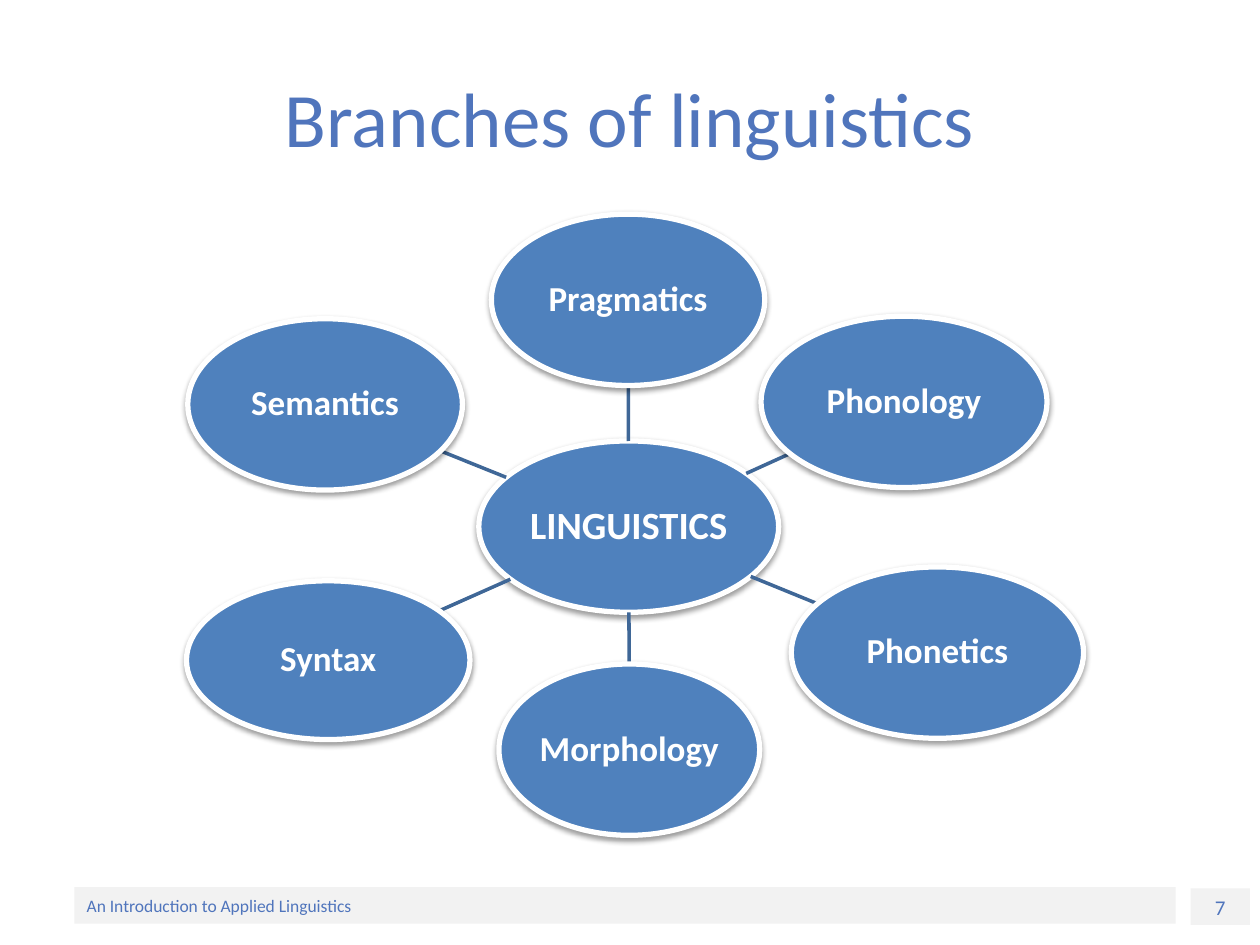
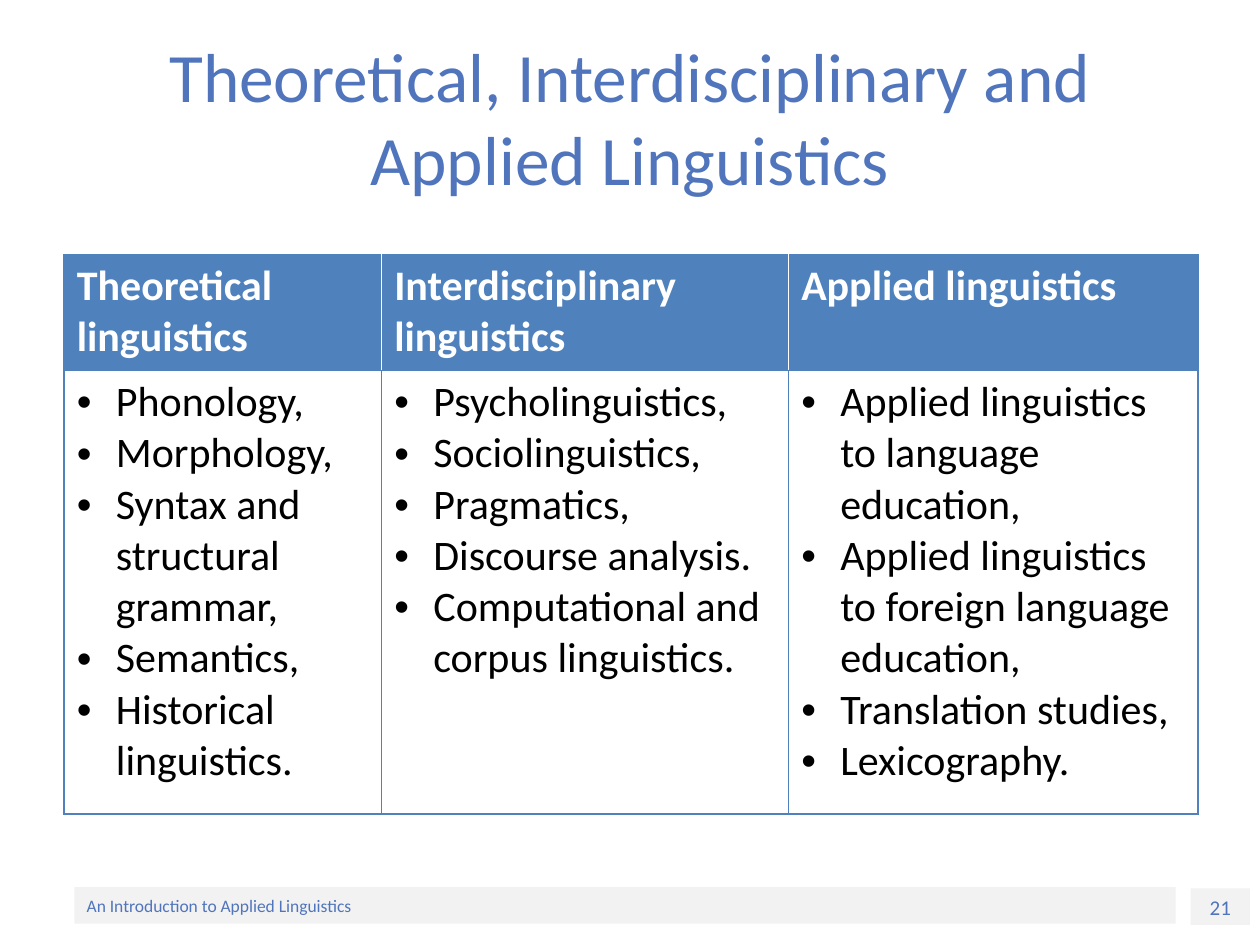
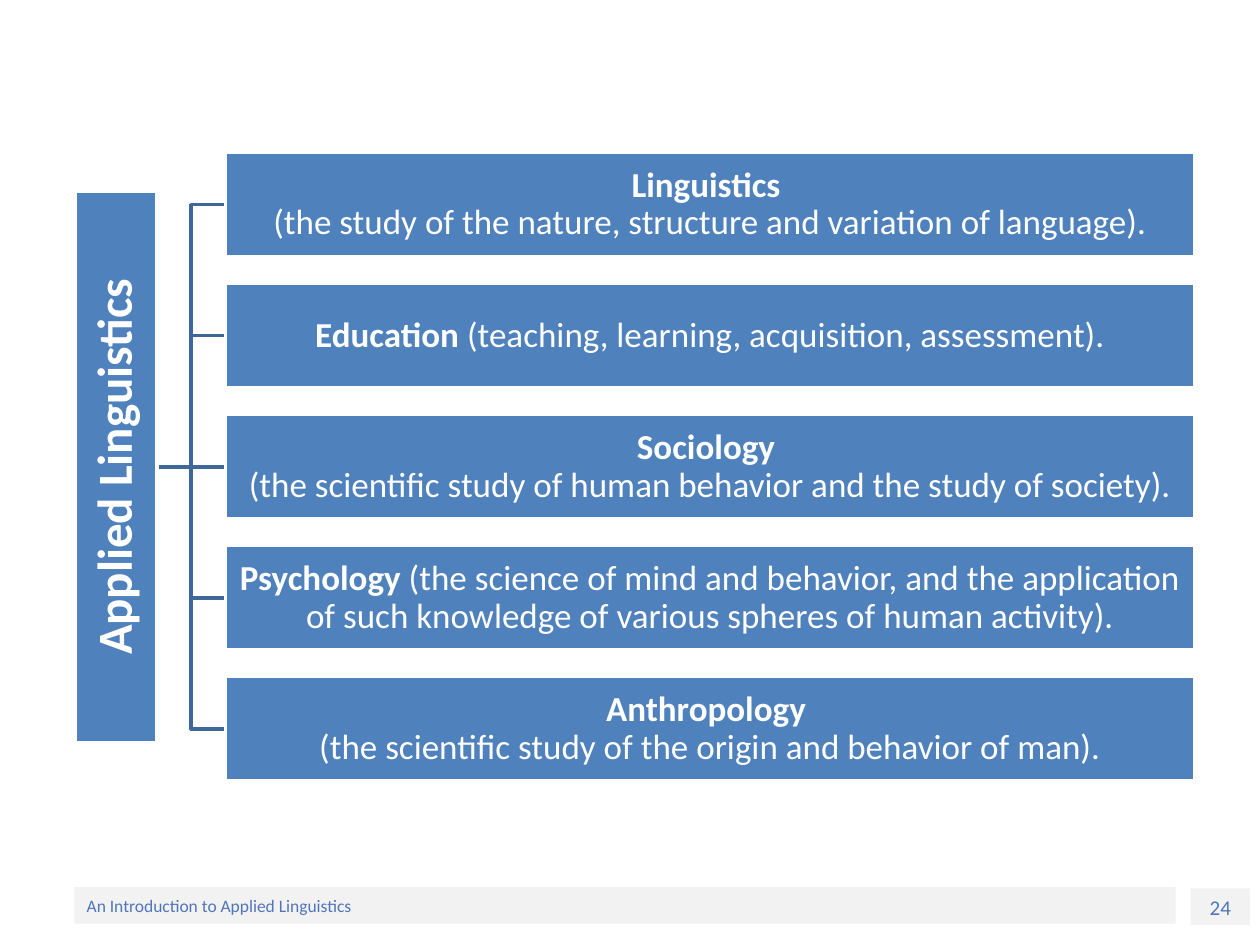
import math

import pptx
import pptx.chart
import pptx.dml.color
import pptx.enum.shapes
import pptx.enum.text
import pptx.oxml
import pptx.oxml.ns
import pptx.util
from lxml import etree

RGB = pptx.dml.color.RGBColor
SHAPE = pptx.enum.shapes.MSO_SHAPE
LINK = pptx.enum.shapes.MSO_CONNECTOR
ALIGN = pptx.enum.text.PP_ALIGN
ANCHOR = pptx.enum.text.MSO_ANCHOR
Pt = pptx.util.Pt

FONT = "Calibri"
INK = RGB(0x50, 0x75, 0xBC)
BLUE = RGB(0x4F, 0x81, 0xBD)
DARK = RGB(0x3F, 0x67, 0x97)
PALE = RGB(0xF2, 0xF2, 0xF2)
WHITE = RGB(0xFF, 0xFF, 0xFF)
BLACK = RGB(0, 0, 0)

# The slide is a grid of 100 columns and 75 rows; boxes are (x, y, w, h) in cells.
WIDTH, HEIGHT = pptx.util.Inches(10), pptx.util.Inches(7.5)
CELL = WIDTH / 100
TITLE = (5, 3, 90, 12.5)
FOOT = (5.9, 70.4, 87.4, 2.9)
PAGE = (94.5, 70.5, 4.7, 2.9)
WHEEL = (14.8, 17, 71.2, 49.3)
TABLE = (5.1, 20.2, 90, 44.4)
TREE = (5.95, 12.1, 88.85, 49.9)

HUB = ("LINGUISTICS", 23.2, 18, 23.8, 13.6)
NODES = [
    ("Pragmatics", 24.2, 0, 21.7, 13.6),
    ("Phonology", 45.6, 8.1, 22.7, 13.6),
    ("Phonetics", 48, 28, 23.2, 13.6),
    ("Morphology", 24.8, 35.7, 20.7, 13.6),
    ("Syntax", 0, 29.1, 22.5, 12.6),
    ("Semantics", 0.1, 8.3, 21.8, 13.6),
]
FIELDS = [
    ("Theoretical linguistics", 25.2,
     ["Phonology,", "Morphology,", "Syntax and structural grammar,",
      "Semantics,", "Historical linguistics."]),
    ("Interdisciplinary linguistics", 32.3,
     ["Psycholinguistics,", "Sociolinguistics,", "Pragmatics,",
      "Discourse analysis.", "Computational and corpus linguistics."]),
    ("Applied linguistics", 32.5,
     ["Applied linguistics to language education,",
      "Applied linguistics to foreign language education,",
      "Translation studies,", "Lexicography."]),
]
SOURCES = [
    ("Linguistics \v", "(the study of the nature, structure and variation of language)."),
    ("Education ", "(teaching, learning, acquisition, assessment)."),
    ("Sociology \v", "(the scientific study of human behavior and the study of society)."),
    ("Psychology", " (the science of mind and behavior, and the application of such "
                   "knowledge of various spheres of human activity)."),
    ("Anthropology \v", "(the scientific study of the origin and behavior of man)."),
]


def emu(*cells):
    return [round(n * CELL) for n in cells]


def tag(parent, name, **attrs):
    return etree.SubElement(parent, pptx.oxml.ns.qn("a:" + name), attrs)


def write(frame, paras, size, color=WHITE, bold=False, align=ALIGN.CENTER,
          anchor=ANCHOR.MIDDLE, inset=None, space=None, bullet=None):
    """Fill a frame; a paragraph is a string or a (bold, plain) pair."""
    frame.word_wrap = True
    frame.vertical_anchor = anchor
    if inset is not None:
        frame.margin_left = frame.margin_right = pptx.util.Inches(inset)
        frame.margin_top = frame.margin_bottom = pptx.util.Inches(inset)
    for i, item in enumerate(paras):
        para = frame.add_paragraph() if i else frame.paragraphs[0]
        para.alignment, para.line_spacing = align, space
        if bullet:
            props = para._p.get_or_add_pPr()
            indent = pptx.util.Inches(0.31)
            props.set("marL", str(indent))
            props.set("indent", str(-indent))
            tag(props, "buFont", typeface="Arial")
            tag(props, "buChar", char=bullet)
        head, *rest = [item] if isinstance(item, str) else item
        para.text = head
        for text in rest:
            para.add_run().text = text
        for n, run in enumerate(para.runs):
            font = run.font
            font.name, font.size, font.color.rgb = FONT, Pt(size), color
            font.bold = bold and n == 0


def block(slide, box, kind=SHAPE.RECTANGLE, fill=BLUE, edge=0):
    shape = slide.shapes.add_shape(kind, *emu(*box))
    shape.shadow.inherit = False
    shape.fill.solid()
    shape.fill.fore_color.rgb = fill
    if edge:
        shape.line.color.rgb, shape.line.width = WHITE, Pt(edge)
    else:
        shape.line.fill.background()
    return shape


def link(slide, start, end, kind=LINK.STRAIGHT):
    line = slide.shapes.add_connector(kind, *emu(*start, *end))
    line.line.color.rgb, line.line.width = DARK, Pt(2)
    tag(line._element.spPr, "effectLst")
    return line


def base(deck, number, title=None, size=44):
    """Add a slide with footer, page number and optional title."""
    slide = deck.slides.add_slide(deck.slide_layouts[6])
    write(block(slide, PAGE, fill=PALE).text_frame, [number], 12, INK, anchor=ANCHOR.TOP)
    write(block(slide, FOOT, fill=PALE).text_frame,
          ["An Introduction to Applied Linguistics"], 10, INK, align=ALIGN.LEFT)
    if title:
        frame = slide.shapes.add_textbox(*emu(*TITLE)).text_frame
        write(frame, [title], size, INK)
    return slide


def rim(box, dx, dy):
    """Point where the ray (dx, dy) from an oval's centre leaves it."""
    x, y, w, h = box
    t = 1 / math.hypot(dx / (w / 2), dy / (h / 2))
    return x + w / 2 + t * dx, y + h / 2 + t * dy


def oval(slide, box, name, size):
    shape = block(slide, box, SHAPE.OVAL, edge=3)
    glow = tag(shape._element.spPr.find(pptx.oxml.ns.qn("a:effectLst")), "outerShdw",
               blurRad=str(Pt(3.1)), dist=str(Pt(1.6)), dir="5400000", rotWithShape="0")
    tag(tag(glow, "srgbClr", val="000000"), "alpha", val="38000")
    write(shape.text_frame, [name], size, bold=True, inset=0.01, space=0.9)


def wheel(slide, box):
    def place(x, y, w, h):
        return box[0] + x, box[1] + y, w, h

    hub = place(*HUB[1:])
    oval(slide, hub, HUB[0], 22)
    for name, *spot in NODES:
        node = place(*spot)
        dx = node[0] + node[2] / 2 - hub[0] - hub[2] / 2
        dy = node[1] + node[3] / 2 - hub[1] - hub[3] / 2
        link(slide, rim(hub, dx, dy), rim(node, -dx, -dy))
        oval(slide, node, name, 20)


def border(cell, **sides):
    props = cell._tc.get_or_add_tcPr()
    for i, side in enumerate("LRTB"):
        line = tag(props, "ln" + side, w=str(Pt(1)))
        tag(tag(line, "solidFill"), "srgbClr", val=str(sides.get(side, BLUE)))
        props.insert(i, line)


def grid(slide, box):
    table = slide.shapes.add_table(2, len(FIELDS), *emu(*box)).table
    table.first_row = table.horz_banding = False
    top = 9.2
    table.rows[0].height, table.rows[1].height = emu(top, box[3] - top)
    last = len(FIELDS) - 1
    for i, (name, width, items) in enumerate(FIELDS):
        table.columns[i].width = emu(width)[0]
        head, body = table.cell(0, i), table.cell(1, i)
        for cell, fill in ((head, BLUE), (body, WHITE)):
            cell.fill.solid()
            cell.fill.fore_color.rgb = fill
        border(head, L=WHITE if i else BLUE, R=WHITE if i < last else BLUE)
        border(body)
        write(head.text_frame, [name], 24, bold=True, align=ALIGN.LEFT, anchor=ANCHOR.TOP)
        write(body.text_frame, items, 24, BLACK, align=ALIGN.LEFT,
              anchor=ANCHOR.TOP, bullet="•")


def tree(slide, box):
    x, y, w, h = box
    stem, trunk, left, tall = 6.5, 43.8, 11.95, 8.3
    step = (h - tall) / (len(SOURCES) - 1)
    mid = y + h / 2
    tops = [y + i * step for i in range(len(SOURCES))]
    lines = []
    for i, top in enumerate(tops):
        kind = LINK.STRAIGHT if 2 * i == len(tops) - 1 else LINK.ELBOW
        lines.append(link(slide, (x + stem, mid), (x + left, top + tall / 2), kind))
    root = block(slide, (x, mid - trunk / 2, stem, trunk), edge=2)
    write(root.text_frame, ["Applied Linguistics"], 28, bold=True, inset=0.02, space=0.9)
    root.text_frame._txBody.bodyPr.set("vert", "vert270")
    for top, line, text in zip(tops, lines, SOURCES):
        bar = block(slide, (x + left, top, w - left, tall), edge=2)
        write(bar.text_frame, [text], 20, bold=True, inset=0.01, space=0.9)
        line.begin_connect(root, 3)
        line.end_connect(bar, 1)


def main():
    deck = pptx.Presentation()
    deck.slide_width, deck.slide_height = WIDTH, HEIGHT
    wheel(base(deck, "7", "Branches of linguistics"), WHEEL)
    title = "Theoretical, Interdisciplinary and Applied Linguistics"
    grid(base(deck, "21", title, 39.6), TABLE)
    tree(base(deck, "24"), TREE)
    deck.save("out.pptx")


if __name__ == "__main__":
    main()
